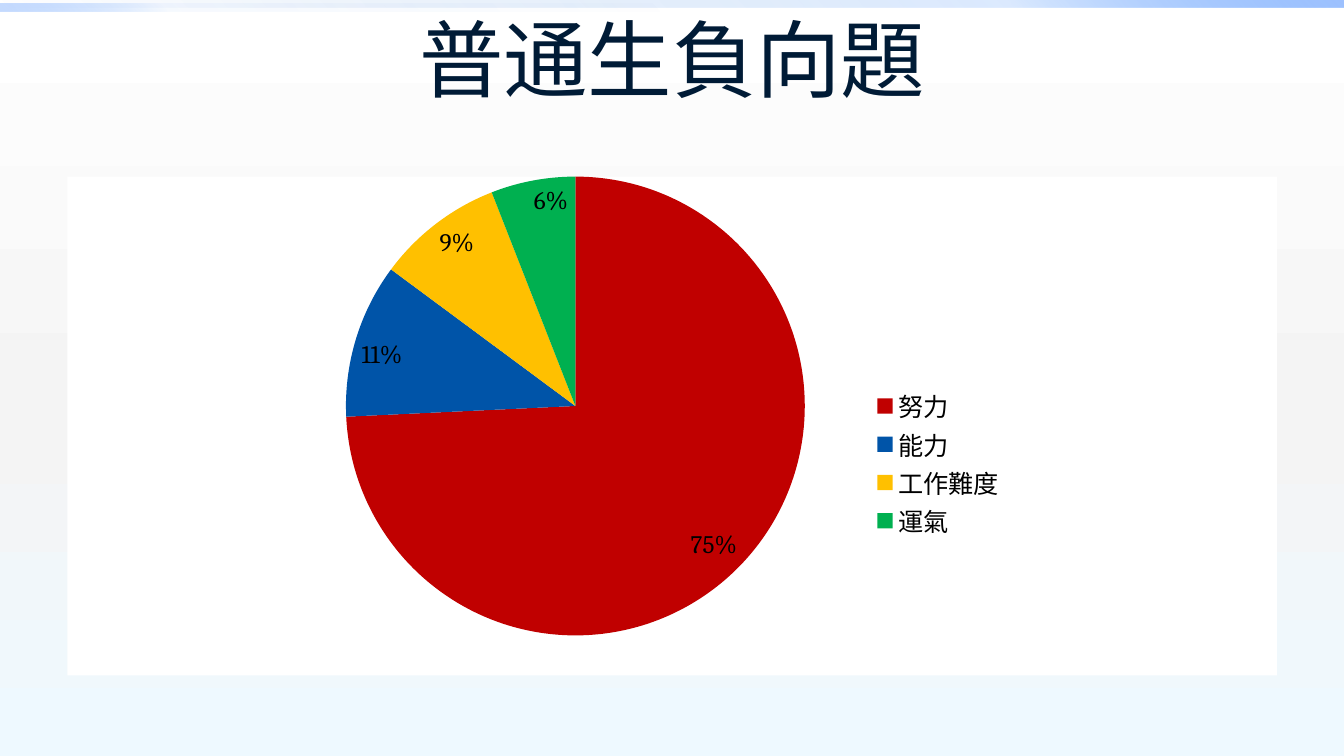
import lxml.etree
import pptx
import pptx.chart.data
import pptx.dml.color
import pptx.enum.chart
import pptx.enum.shapes
import pptx.enum.text
import pptx.oxml.ns
import pptx.util
from pptx.dml.color import RGBColor
from pptx.util import Cm

BLACK = RGBColor(0x00, 0x00, 0x00)
WHITE = RGBColor(0xFF, 0xFF, 0xFF)
NAVY = RGBColor(0x00, 0x1B, 0x36)
LIGHT_GREY = RGBColor(0xF4, 0xF4, 0xF4)
ICE = RGBColor(0xEE, 0xF9, 0xFF)
DEEP_BLUE = RGBColor(0x00, 0x58, 0xB7)
BRIGHT_BLUE = RGBColor(0x4F, 0x95, 0xFF)
PALE_BLUE = RGBColor(0x9E, 0xC2, 0xFF)
RED = RGBColor(0xC0, 0x00, 0x00)
BLUE = RGBColor(0x00, 0x54, 0xA8)
YELLOW = RGBColor(0xFF, 0xC0, 0x00)
GREEN = RGBColor(0x00, 0xB0, 0x50)

TITLE_FONT = "Noto Sans CJK SC"
CHART_FONT = "Cambria"
SLIDE_WIDTH = Cm(33.87)

ATTRIBUTIONS = [
    ("努力", 75, RED),
    ("能力", 11, BLUE),
    ("工作難度", 9, YELLOW),
    ("運氣", 6, GREEN),
]


def add_child(parent, tag, **attributes):
    child = lxml.etree.SubElement(parent, pptx.oxml.ns.qn(tag))
    for name, value in attributes.items():
        child.set(name, str(value))
    return child


def set_gradient(owner, fill, stops, angle):
    """Fill with (position, colour, opacity) stops in percent; angle runs clockwise."""
    fill.gradient()
    gradient = owner.element.find(".//" + pptx.oxml.ns.qn("a:gradFill"))
    for child in list(gradient):
        gradient.remove(child)
    stop_list = add_child(gradient, "a:gsLst")
    for position, color, opacity in stops:
        stop = add_child(stop_list, "a:gs", pos=position * 1000)
        rgb = add_child(stop, "a:srgbClr", val=color)
        if opacity < 100:
            add_child(rgb, "a:alpha", val=opacity * 1000)
    add_child(gradient, "a:lin", ang=angle * 60000, scaled=0)


def add_top_bar(slide, top, width, opacities, angle):
    bar = slide.shapes.add_shape(
        pptx.enum.shapes.MSO_SHAPE.RECTANGLE, 0, top, width, Cm(0.2))
    bar.shadow.inherit = False
    bar.line.fill.background()
    colors = (DEEP_BLUE, BRIGHT_BLUE, PALE_BLUE)
    set_gradient(bar, bar.fill, zip((0, 75, 100), colors, opacities), angle)


def add_title(slide, text):
    box = slide.shapes.add_textbox(Cm(1.7), Cm(0.76), Cm(30.48), Cm(3.18))
    frame = box.text_frame
    frame.word_wrap = True
    frame.vertical_anchor = pptx.enum.text.MSO_ANCHOR.MIDDLE
    frame.margin_top = 0
    frame.margin_bottom = Cm(1.8)
    frame.text = text
    paragraph = frame.paragraphs[0]
    paragraph.alignment = pptx.enum.text.PP_ALIGN.CENTER
    font = paragraph.runs[0].font
    font.size = pptx.util.Pt(60.3)
    font.color.rgb = NAVY
    font.name = TITLE_FONT
    add_child(paragraph.runs[0].font._element, "a:ea", typeface=TITLE_FONT)


def set_layout(element, x, y, width, height, inner=False):
    """Place a plot area or legend by fractions of the chart."""
    layout = element.get_or_add_layout()
    for child in list(layout):
        layout.remove(child)
    manual = add_child(layout, "c:manualLayout")
    if inner:
        add_child(manual, "c:layoutTarget", val="inner")
    add_child(manual, "c:xMode", val="edge")
    add_child(manual, "c:yMode", val="edge")
    for tag, value in zip("xywh", (x, y, width, height)):
        add_child(manual, "c:" + tag, val=value)


def fill_chart_background(chart, color):
    properties = lxml.etree.Element(pptx.oxml.ns.qn("c:spPr"))
    fill = add_child(properties, "a:solidFill")
    add_child(fill, "a:srgbClr", val=color)
    add_child(add_child(properties, "a:ln"), "a:noFill")
    chart.element.find(pptx.oxml.ns.qn("c:chart")).addnext(properties)


def format_labels(plot):
    plot.has_data_labels = True
    labels = plot.data_labels
    labels.show_value = True
    labels.show_percentage = False
    labels.number_format = '0"%"'
    labels.number_format_is_linked = False
    labels.position = pptx.enum.chart.XL_LABEL_POSITION.INSIDE_END


def add_pie(slide, slices):
    names, values, colors = zip(*slices)
    data = pptx.chart.data.CategoryChartData()
    data.categories = names
    data.add_series("Series 1", values)
    chart = slide.shapes.add_chart(
        pptx.enum.chart.XL_CHART_TYPE.PIE,
        Cm(1.7), Cm(4.45), Cm(30.48), Cm(12.57), data).chart
    chart.has_title = False
    chart.font.size = pptx.util.Pt(18)
    chart.font.name = CHART_FONT
    chart.font.color.rgb = BLACK
    fill_chart_background(chart, WHITE)

    plot = chart.plots[0]
    plot.vary_by_categories = True
    for index, color in enumerate(colors):
        point_format = plot.series[0].points[index].format
        point_format.fill.solid()
        point_format.fill.fore_color.rgb = color
        point_format.line.fill.background()
    format_labels(plot)

    chart.has_legend = True
    chart.legend.position = pptx.enum.chart.XL_LEGEND_POSITION.RIGHT
    chart.legend.include_in_layout = False
    plot_area = chart.element.find(".//" + pptx.oxml.ns.qn("c:plotArea"))
    legend = chart.element.find(".//" + pptx.oxml.ns.qn("c:legend"))
    set_layout(legend, 0.66, 0.42, 0.12, 0.31)
    layout = plot_area.find(pptx.oxml.ns.qn("c:layout"))
    if layout is None:
        layout = lxml.etree.Element(pptx.oxml.ns.qn("c:layout"))
        plot_area.insert(0, layout)
    set_plot_layout(layout)


def set_plot_layout(layout):
    manual = add_child(layout, "c:manualLayout")
    add_child(manual, "c:layoutTarget", val="inner")
    add_child(manual, "c:xMode", val="edge")
    add_child(manual, "c:yMode", val="edge")
    for tag, value in zip("xywh", (0.23, 0, 0.38, 0.92)):
        add_child(manual, "c:" + tag, val=value)


def main():
    presentation = pptx.Presentation()
    presentation.slide_width = SLIDE_WIDTH
    presentation.slide_height = Cm(19.05)
    slide = presentation.slides.add_slide(presentation.slide_layouts[6])
    set_gradient(slide, slide.background.fill,
                 [(0, WHITE, 100), (55, LIGHT_GREY, 100), (100, ICE, 100)], 90)
    add_top_bar(slide, 0, SLIDE_WIDTH, (0, 20, 100), 315)
    add_top_bar(slide, Cm(0.1), SLIDE_WIDTH // 2, (0, 5, 60), 135)
    add_title(slide, "普通生負向題")
    add_pie(slide, ATTRIBUTIONS)
    presentation.save("out.pptx")


if __name__ == "__main__":
    main()
